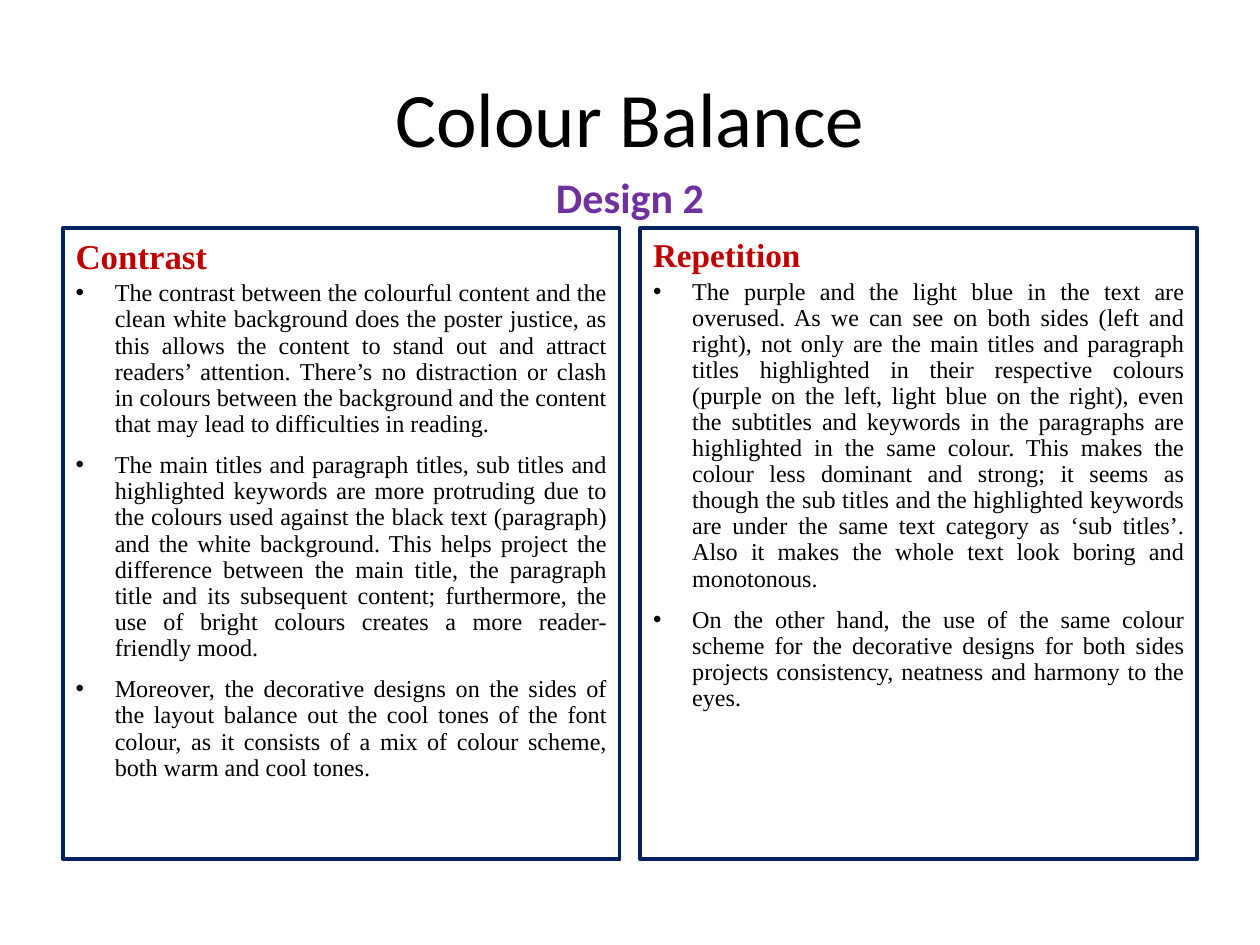
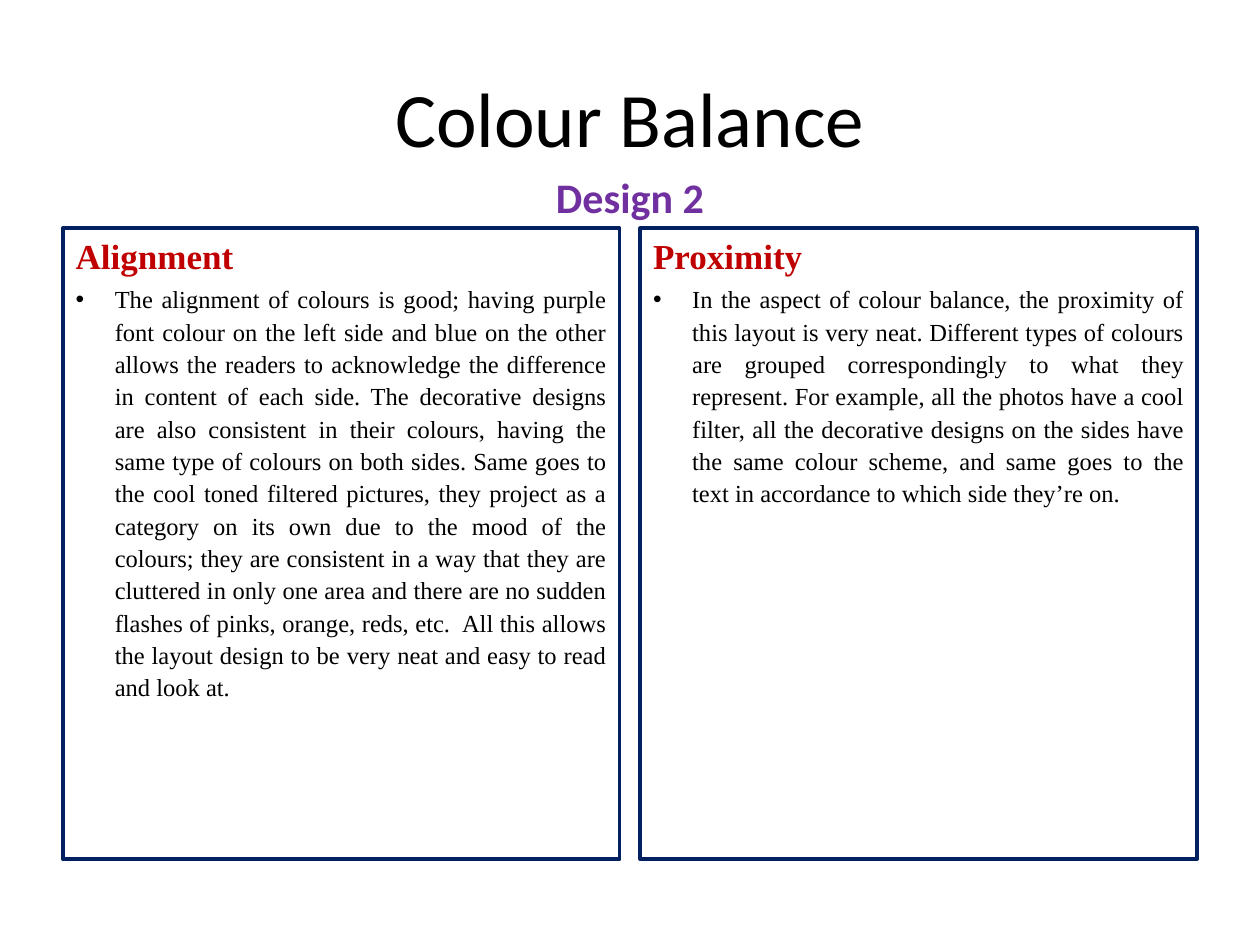
from lxml.etree import SubElement
from pptx import Presentation
from pptx.dml.color import RGBColor
from pptx.enum.text import MSO_ANCHOR, MSO_AUTO_SIZE, PP_ALIGN
from pptx.oxml.ns import qn
from pptx.util import Cm, Pt

# Shared look
HUES = {"ink": "000000", "head": "C00000", "frame": "002060", "sub": "7030A0"}
SANS, SERIF = "Calibri", "Times New Roman"
EDGE, WIDE = 1.27, 22.86
PANEL = 11.22
INDENT = 0.79

# Each slide: body size, line spacing, panels of (heading, heading size, points)
PAGES = [
    (13.8, 0.9, [
        ("Contrast", 19.9, [
            "The contrast between the colourful content and the clean white background does the poster "
            "justice, as this allows the content to stand out and attract readers’ attention. There’s no "
            "distraction or clash in colours between the background and the content that may lead to "
            "difficulties in reading.",
            "The main titles and paragraph titles, sub titles and highlighted keywords are more protruding "
            "due to the colours used against the black text (paragraph) and the white background. This "
            "helps project the difference between the main title, the paragraph title and its subsequent "
            "content; furthermore, the use of bright colours creates a more reader-friendly mood.",
            "Moreover, the decorative designs on the sides of the layout balance out the cool tones of the "
            "font colour, as it consists of a mix of colour scheme, both warm and cool tones.",
        ]),
        ("Repetition", 19, [
            "The purple and the light blue in the text are overused. As we can see on both sides (left and "
            "right), not only are the main titles and paragraph titles highlighted in their respective "
            "colours (purple on the left, light blue on the right), even the subtitles and keywords in the "
            "paragraphs are highlighted in the same colour. This makes the colour less dominant and strong; "
            "it seems as though the sub titles and the highlighted keywords are under the same text "
            "category as ‘sub titles’. Also it makes the whole text look boring and monotonous.",
            "On the other hand, the use of the same colour scheme for the decorative designs for both sides "
            "projects consistency, neatness and harmony to the eyes.",
        ]),
    ]),
    (14, 1.1, [
        ("Alignment", 20, [
            "The alignment of colours is good; having purple font colour on the left side and blue on the "
            "other allows the readers to acknowledge the difference in content of each side. The decorative "
            "designs are also consistent in their colours, having the same type of colours on both sides. "
            "Same goes to the cool toned filtered pictures, they project as a category on its own due to "
            "the mood of the colours; they are consistent in a way that they are cluttered in only one area "
            "and there are no sudden flashes of pinks, orange, reds, etc.  All this allows the layout "
            "design to be very neat and easy to read and look at.",
        ]),
        ("Proximity", 20, [
            "In the aspect of colour balance, the proximity of this layout is very neat. Different types of "
            "colours are grouped correspondingly to what they represent. For example, all the photos have a "
            "cool filter, all the decorative designs on the sides have the same colour scheme, and same "
            "goes to the text in accordance to which side they’re on.",
        ]),
    ]),
]


def write(para, text, size, face, hue, bold=False):
    run = para.add_run()
    run.text = text
    font = run.font
    font.size, font.name, font.bold = Pt(size), face, bold
    font.color.rgb = RGBColor.from_string(HUES[hue])


def place(shape, left, top, width, height):
    shape.left, shape.top = Cm(left), Cm(top)
    shape.width, shape.height = Cm(width), Cm(height)


deck = Presentation()
deck.slide_width, deck.slide_height = Cm(25.4), Cm(19.05)

for size, line, panels in PAGES:
    slide = deck.slides.add_slide(deck.slide_layouts[3])

    # Title
    title = slide.shapes.title
    place(title, EDGE, 0.76, WIDE, 3.18)
    title.text_frame.vertical_anchor = MSO_ANCHOR.MIDDLE
    para = title.text_frame.paragraphs[0]
    para.alignment = PP_ALIGN.CENTER
    write(para, "Colour Balance", 44, SANS, "ink")

    # Framed panels, flush with both edges of the title
    for col, (head, large, points) in enumerate(panels):
        body = slide.placeholders[col + 1]
        place(body, EDGE + col * (WIDE - PANEL), 4.6, PANEL, 12.72)
        body.line.color.rgb = RGBColor.from_string(HUES["frame"])
        body.line.width = Pt(2.25)
        frame = body.text_frame
        frame.auto_size = MSO_AUTO_SIZE.NONE
        frame.vertical_anchor = MSO_ANCHOR.TOP

        # Heading without a bullet
        para = frame.paragraphs[0]
        props = para._p.get_or_add_pPr()
        props.set("marL", "0")
        props.set("indent", "0")
        SubElement(props, qn("a:buNone"))
        para.space_before = Pt(0)
        write(para, head, large, SERIF, "head", True)

        # Bulleted points
        for text in points:
            para = frame.add_paragraph()
            para.level = 1
            props = para._p.get_or_add_pPr()
            props.set("marL", str(Cm(INDENT)))
            props.set("indent", str(-Cm(INDENT)))
            SubElement(props, qn("a:buFont")).set("typeface", "Arial")
            SubElement(props, qn("a:buChar")).set("char", "•")
            para.alignment = PP_ALIGN.JUSTIFY
            para.line_spacing = line
            para.space_before, para.space_after = Pt(size * 0.2), Pt(6)
            write(para, text, size, SERIF, "ink")

    # Subtitle
    sub = slide.shapes.add_textbox(Cm(1.3), Cm(3.33), Cm(22.8), Cm(1.27))
    sub.text_frame.word_wrap = True
    para = sub.text_frame.paragraphs[0]
    para.alignment = PP_ALIGN.CENTER
    write(para, "Design 2", 24, SANS, "sub", True)

deck.save("out.pptx")
